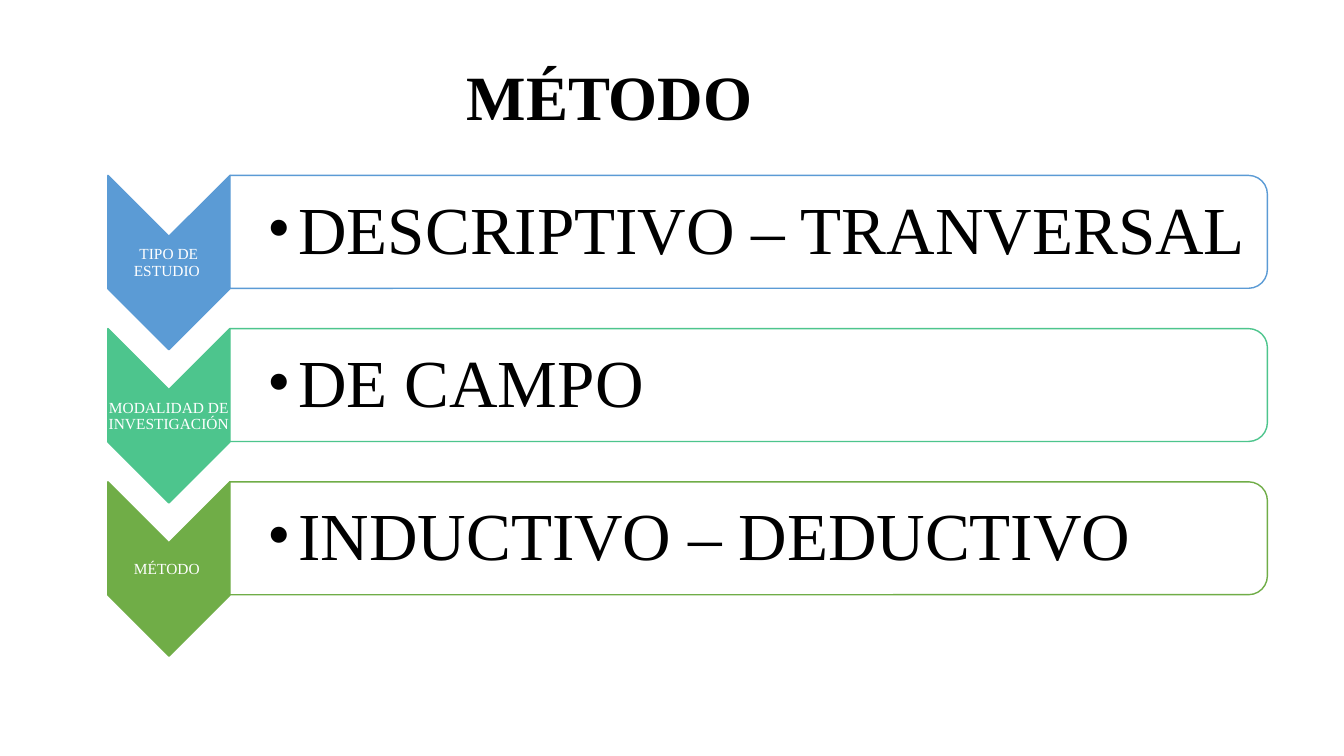
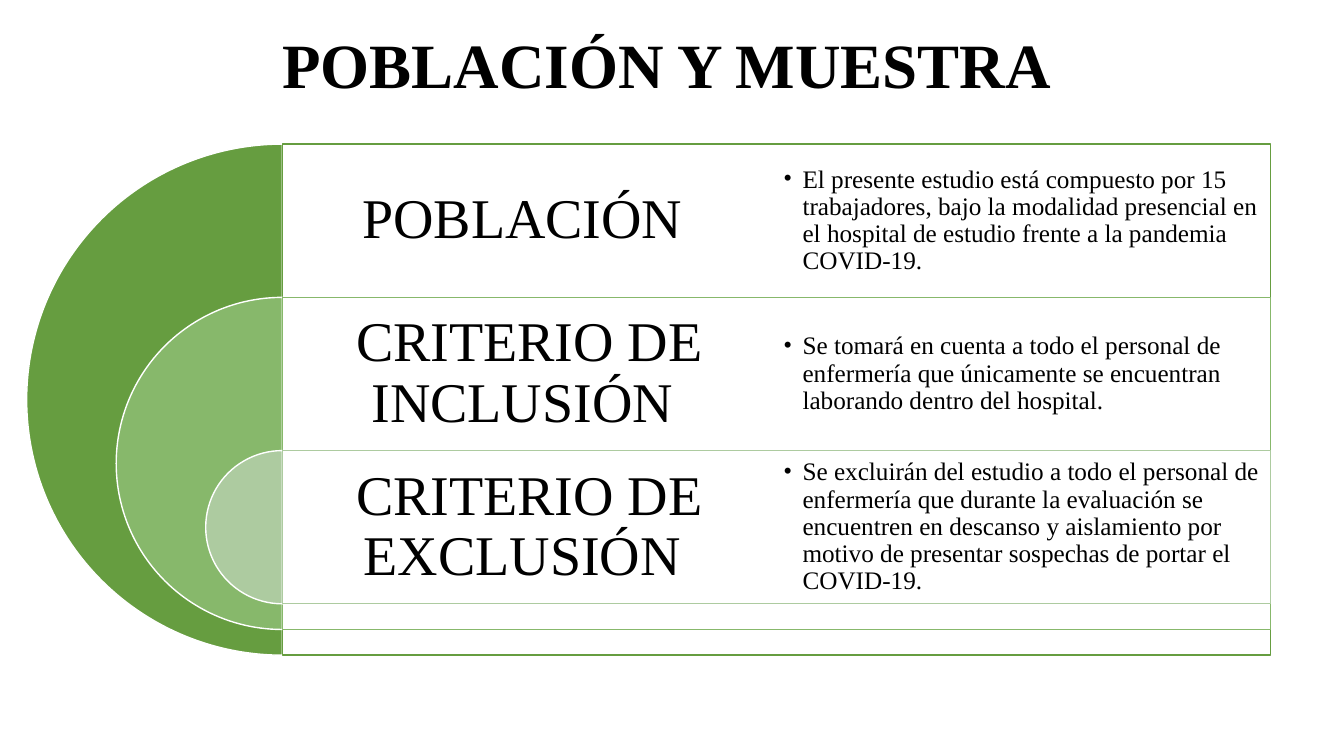
from dataclasses import dataclass

from lxml import etree
from pptx import Presentation
from pptx import slide as sl
from pptx import util as u
from pptx.dml import color
from pptx.enum import shapes, text
from pptx.oxml import ns
from pptx.shapes import autoshape

PRESET = shapes.MSO_SHAPE
ALIGN = text.PP_ALIGN


@dataclass(frozen=True)
class Theme:
    font: str = "Times New Roman"
    ink: str = "000000"
    paper: str = "FFFFFF"
    title_size: int = 45
    step_size: int = 11
    answer_size: int = 48
    criterion_size: int = 40
    detail_size: int = 18
    line_width: float = 1
    line_spacing: float = 0.9
    panel_opacity: int = 90


@dataclass(frozen=True)
class Box:
    """Visible place on the slide, in inches."""
    left: float
    top: float
    width: float
    height: float

    def turned(self) -> "Box":
        """Frame that covers this place after a quarter turn."""
        shift = (self.width - self.height) / 2
        return Box(self.left + shift, self.top - shift, self.height, self.width)

    def lengths(self) -> tuple[u.Length, ...]:
        return tuple(u.Inches(v) for v in (self.left, self.top, self.width, self.height))


@dataclass(frozen=True)
class Margins:
    left: float
    other: float


@dataclass(frozen=True)
class Step:
    label: str
    answer: str
    accent: str


@dataclass(frozen=True)
class Criterion:
    label: str
    detail: str
    accent: str


THEME = Theme()
ROW_PITCH = 1.52

STEPS = (
    Step("TIPO DE ESTUDIO ", "DESCRIPTIVO – TRANVERSAL", "5B9BD5"),
    Step("MODALIDAD DE INVESTIGACIÓN ", "DE CAMPO", "4DC58D"),
    Step("MÉTODO ", "INDUCTIVO – DEDUCTIVO", "70AD47"),
)
CRITERIA = (
    Criterion(
        "POBLACIÓN ",
        "El presente estudio está compuesto por 15 trabajadores, bajo la modalidad "
        "presencial en el hospital de estudio frente a la pandemia COVID-19.",
        "669D40",
    ),
    Criterion(
        "CRITERIO DE INCLUSIÓN ",
        "Se tomará en cuenta a todo el personal de enfermería que únicamente se "
        "encuentran laborando dentro del hospital.",
        "87B86B",
    ),
    Criterion(
        "CRITERIO DE EXCLUSIÓN ",
        "Se excluirán del estudio a todo el personal de enfermería que durante la "
        "evaluación se encuentren en descanso y aislamiento por motivo de presentar "
        "sospechas de portar el COVID-19.",
        "ADCBA0",
    ),
)


def add_figure(slide: sl.Slide, preset: PRESET, box: Box, fill: str, line: str,
               quarter_turn: bool = False) -> autoshape.Shape:
    frame = box.turned() if quarter_turn else box
    figure = slide.shapes.add_shape(preset, *frame.lengths())
    figure.rotation = 90 if quarter_turn else 0
    figure.shadow.inherit = False
    figure.fill.solid()
    figure.fill.fore_color.rgb = color.RGBColor.from_string(fill)
    figure.line.color.rgb = color.RGBColor.from_string(line)
    figure.line.width = u.Pt(THEME.line_width)
    return figure


def add_panel(slide: sl.Slide, preset: PRESET, box: Box, line: str,
              quarter_turn: bool = False) -> None:
    """Outlined panel with a slightly transparent paper fill."""
    panel = add_figure(slide, preset, box, THEME.paper, line, quarter_turn)
    paper = panel.fill._xPr.find(f"{ns.qn('a:solidFill')}/{ns.qn('a:srgbClr')}")
    etree.SubElement(paper, ns.qn("a:alpha"), val=str(THEME.panel_opacity * 1000))


def add_text(slide: sl.Slide, box: Box, words: str, size: int, margins: Margins,
             ink: str = THEME.ink, align: ALIGN = ALIGN.LEFT, bold: bool = False,
             bullet_indent: float = 0) -> None:
    frame = slide.shapes.add_textbox(*box.lengths()).text_frame
    frame.word_wrap = True
    frame.vertical_anchor = text.MSO_ANCHOR.MIDDLE
    frame.margin_left = u.Inches(margins.left)
    frame.margin_top = frame.margin_right = frame.margin_bottom = u.Inches(margins.other)
    paragraph = frame.paragraphs[0]
    paragraph.text = words
    if bullet_indent:
        properties = paragraph._p.get_or_add_pPr()
        indent = u.Inches(bullet_indent)
        properties.set("marL", str(indent))
        properties.set("indent", str(-indent))
        etree.SubElement(properties, ns.qn("a:buFont"), typeface=THEME.font)
        etree.SubElement(properties, ns.qn("a:buChar"), char="•")
    paragraph.alignment = align
    paragraph.line_spacing = THEME.line_spacing
    paragraph.font.name = THEME.font
    paragraph.font.size = u.Pt(size)
    paragraph.font.bold = bold
    paragraph.font.color.rgb = color.RGBColor.from_string(ink)


def add_titled_slide(deck: Presentation, title: str, box: Box) -> sl.Slide:
    slide = deck.slides.add_slide(deck.slide_layouts[6])
    add_text(slide, box, title, THEME.title_size, Margins(0.1, 0.05), bold=True)
    return slide


def add_step(slide: sl.Slide, step: Step, top: float) -> None:
    left, width, band_left = 1.07, 1.21, 2.28
    add_figure(slide, PRESET.CHEVRON, Box(left, top, width, 1.73),
               step.accent, step.accent, quarter_turn=True)
    add_text(slide, Box(left - 0.01, top + 0.61, width + 0.02, 0.52), step.label,
             THEME.step_size, Margins(0, 0), THEME.paper, ALIGN.CENTER)
    add_panel(slide, PRESET.ROUND_2_SAME_RECTANGLE, Box(band_left, top, 10.29, 1.12),
              step.accent, quarter_turn=True)
    add_text(slide, Box(band_left, top + 0.06, 10.24, 1.01), step.answer,
             THEME.answer_size, Margins(0.37, 0.03), bullet_indent=0.31)


def add_criteria(slide: sl.Slide, criteria: tuple[Criterion, ...]) -> None:
    """Nested half discs, each opening into a panel with a label and a detail."""
    axis, first_top, outer, column = 2.8, 1.43, 5.07, 4.9
    shrink = (outer - ROW_PITCH) / (len(criteria) - 1)
    for row, criterion in enumerate(criteria):
        top = first_top + row * ROW_PITCH
        diameter = outer - row * shrink
        disc = add_figure(slide, PRESET.PIE,
                          Box(axis - diameter / 2, top, diameter, diameter),
                          criterion.accent, THEME.paper)
        disc.adjustments[0], disc.adjustments[1] = 54, 162
        add_panel(slide, PRESET.RECTANGLE, Box(axis, top, 2 * column, diameter),
                  criterion.accent)
        add_text(slide, Box(axis, top, column, ROW_PITCH), criterion.label,
                 THEME.criterion_size, Margins(0.17, 0.17), align=ALIGN.CENTER)
    for row, criterion in enumerate(criteria):
        add_text(slide, Box(axis + column, first_top + row * ROW_PITCH, column, ROW_PITCH),
                 criterion.detail, THEME.detail_size, Margins(0.07, 0.07),
                 bullet_indent=0.19)


def main() -> None:
    deck = Presentation()
    deck.slide_width, deck.slide_height = u.Inches(13.33), u.Inches(7.5)

    method = add_titled_slide(deck, "MÉTODO", Box(4.53, 0.42, 4.58, 1.15))
    for row, step in enumerate(STEPS):
        add_step(method, step, 1.74 + row * ROW_PITCH)

    population = add_titled_slide(deck, "POBLACIÓN Y MUESTRA", Box(2.7, 0, 8.41, 1.36))
    add_criteria(population, CRITERIA)

    deck.save("out.pptx")


if __name__ == "__main__":
    main()
